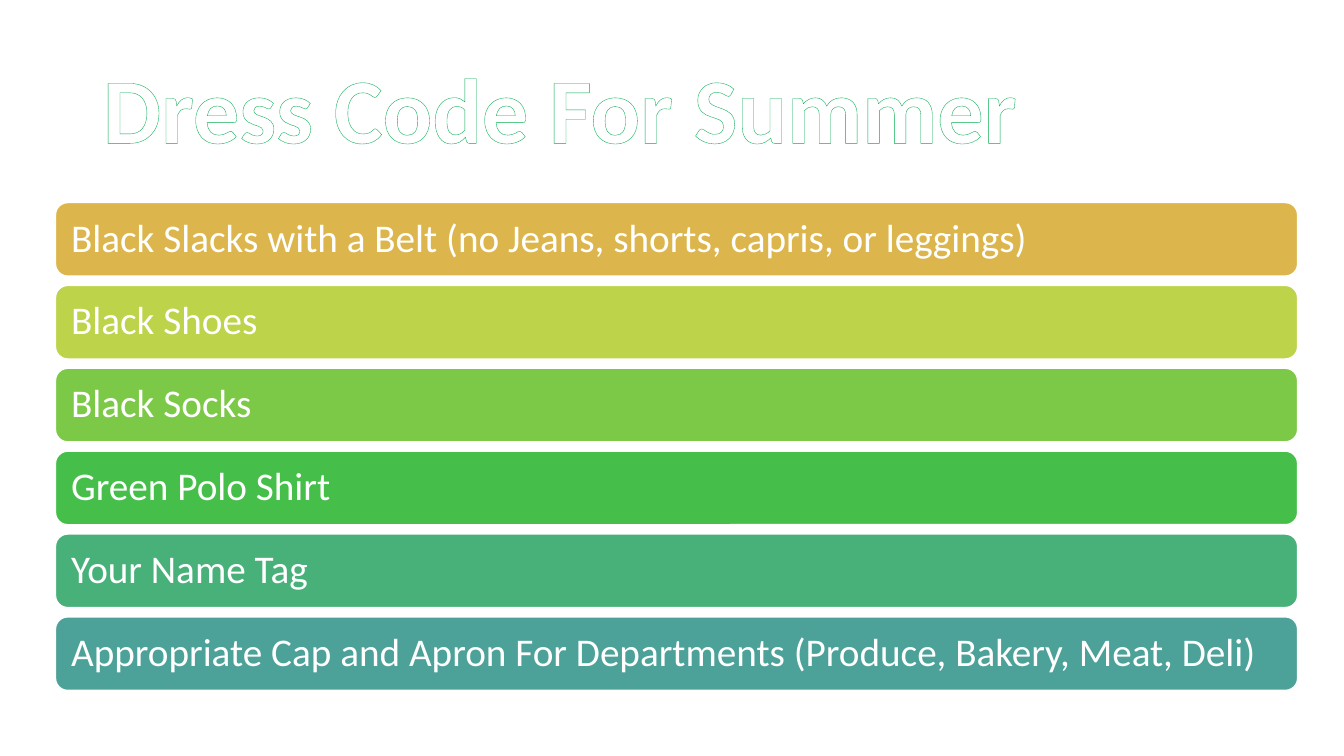
from dataclasses import dataclass

from lxml.etree import fromstring
from pptx import Presentation
from pptx.dml.color import RGBColor
from pptx.enum.dml import MSO_PATTERN
from pptx.enum.shapes import MSO_SHAPE
from pptx.enum.text import MSO_ANCHOR, MSO_AUTO_SIZE, PP_ALIGN
from pptx.util import Inches, Pt


@dataclass(frozen=True)
class Theme:
    """Colours and type sizes of the slide."""
    font: str = "Calibri"
    white: str = "FFFFFF"
    title_pattern: str = "92D050"
    title_outline: str = "00AC4E"
    title_size: int = 66
    item_size: int = 28
    line_spacing: float = 0.9


@dataclass(frozen=True)
class Box:
    """A rectangle in inches."""
    left: float
    top: float
    width: float
    height: float


THEME = Theme()
DRAWING_NS = "http://schemas.openxmlformats.org/drawingml/2006/main"
DRESS_CODE = [
    ("Black Slacks with a Belt (no Jeans, shorts, capris, or leggings)", "DCB64D"),
    ("Black Shoes", "BCD34A"),
    ("Black Socks", "7CC948"),
    ("Green Polo Shirt", "46BF4A"),
    ("Your Name Tag", "48B179"),
    ("Appropriate Cap and Apron For Departments (Produce, Bakery, Meat, Deli)", "4CA198"),
]


def rgb(code):
    """Return the colour for a hex code."""
    return RGBColor.from_string(code)


def write_line(shape, text, size):
    """Write one left-aligned, vertically centred line and return its font."""
    frame = shape.text_frame
    frame.text = text
    frame.word_wrap = True
    frame.auto_size = MSO_AUTO_SIZE.NONE
    frame.vertical_anchor = MSO_ANCHOR.MIDDLE
    para = frame.paragraphs[0]
    para.alignment = PP_ALIGN.LEFT
    para.line_spacing = THEME.line_spacing
    font = para.runs[0].font
    font.name = THEME.font
    font.size = Pt(size)
    return font


def outline_text(span, code, points):
    """Draw a solid outline around the letters of a run."""
    outline = fromstring(
        f'<a:ln xmlns:a="{DRAWING_NS}" w="{Pt(points)}"><a:solidFill>'
        f'<a:srgbClr val="{code}"/></a:solidFill></a:ln>'
    )
    span.font._element.insert(0, outline)


def place_title(page, box, text):
    """Place the patterned, outlined title in the box."""
    title = page.shapes.title
    title.left, title.top = Inches(box.left), Inches(box.top)
    title.width, title.height = Inches(box.width), Inches(box.height)
    font = write_line(title, text, THEME.title_size)
    font.bold = True
    font.fill.patterned()
    font.fill.pattern = MSO_PATTERN.TRELLIS
    font.fill.fore_color.rgb = rgb(THEME.title_pattern)
    font.fill.back_color.rgb = rgb(THEME.white)
    outline_text(title.text_frame.paragraphs[0].runs[0], THEME.title_outline, 1)


def add_bar(page, box, text, color):
    """Add one rounded bar with its text."""
    bar = page.shapes.add_shape(
        MSO_SHAPE.ROUNDED_RECTANGLE,
        Inches(box.left), Inches(box.top), Inches(box.width), Inches(box.height),
    )
    bar.shadow.inherit = False
    bar.fill.solid()
    bar.fill.fore_color.rgb = rgb(color)
    bar.line.color.rgb = rgb(THEME.white)
    bar.line.width = Pt(1)
    frame = bar.text_frame
    frame.margin_left = frame.margin_right = Inches(0.12)
    frame.margin_top = frame.margin_bottom = Inches(0.12)
    write_line(bar, text, THEME.item_size).color.rgb = rgb(THEME.white)


def place_bars(page, box, items, bar_height):
    """Stack the bars with equal gaps from top to bottom of the box."""
    step = (box.height - bar_height) / (len(items) - 1)
    for index, (text, color) in enumerate(items):
        bar_box = Box(box.left, box.top + index * step, box.width, bar_height)
        add_bar(page, bar_box, text, color)


def main():
    """Build and save the dress code slide."""
    deck = Presentation()
    deck.slide_width, deck.slide_height = Inches(13.33), Inches(7.5)
    page = deck.slides.add_slide(deck.slide_layouts[5])
    place_title(page, Box(0.92, 0.4, 11.5, 1.45), "Dress Code For Summer")
    place_bars(page, Box(0.55, 2.01, 12.32, 4.84), DRESS_CODE, 0.73)
    deck.save("out.pptx")


if __name__ == "__main__":
    main()
